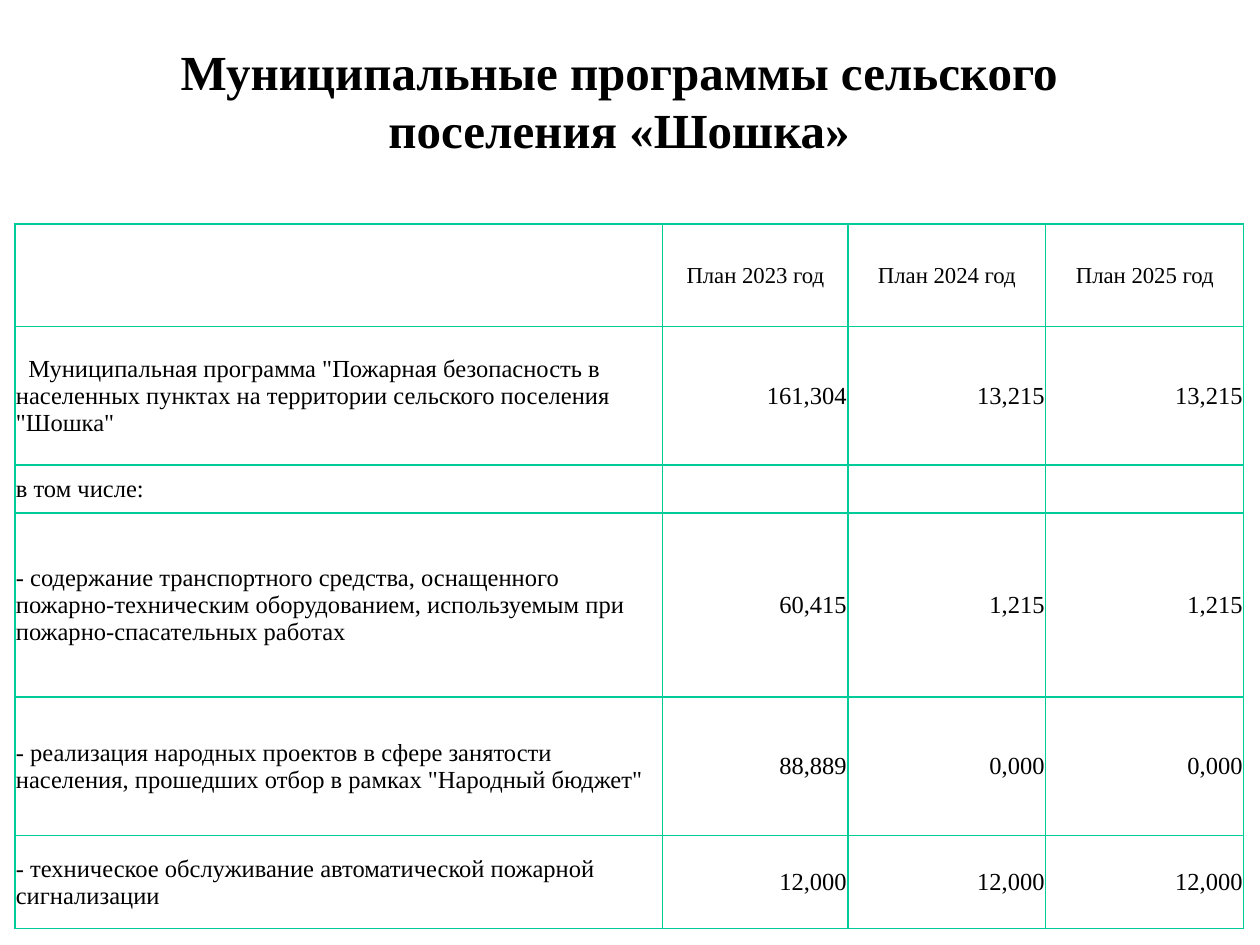
"""Build the slide listing the municipal programmes of a rural settlement."""
from dataclasses import dataclass

from lxml import etree
from pptx import Presentation
from pptx.dml.color import RGBColor
from pptx.enum.text import MSO_ANCHOR, MSO_AUTO_SIZE, PP_ALIGN
from pptx.oxml.ns import qn
from pptx.util import Cm, Pt

LEFT, CENTER, RIGHT = PP_ALIGN.LEFT, PP_ALIGN.CENTER, PP_ALIGN.RIGHT
MIDDLE = MSO_ANCHOR.MIDDLE
NO_AUTOFIT = MSO_AUTO_SIZE.NONE
TITLE_ONLY = 5


@dataclass(frozen=True)
class Theme:
    font: str = "Times New Roman"
    text: str = "000000"
    border: str = "00CC99"
    border_width: int = Pt(1)
    title_size: int = Pt(28)
    header_size: int = Pt(13)
    body_size: int = Pt(14)


THEME = Theme()
TITLE = "Муниципальные программы сельского поселения «Шошка»"
COLUMN_WIDTHS = (13.06, 3.73, 3.99, 3.99)
ROW_HEIGHTS = (2.06, 2.79, 0.97, 3.71, 2.79, 1.88)
PROGRAMME_ROW = 1
ROWS = (
    ("", "План 2023 год", "План 2024 год", "План 2025 год"),
    ('Муниципальная программа "Пожарная безопасность в населенных пунктах '
     'на территории сельского поселения "Шошка"', "161,304", "13,215", "13,215"),
    ("в том числе:", "", "", ""),
    ("- содержание транспортного средства, оснащенного пожарно-техническим "
     "оборудованием, используемым при пожарно-спасательных работах",
     "60,415", "1,215", "1,215"),
    ("- реализация народных проектов в сфере занятости населения, прошедших "
     'отбор в рамках "Народный бюджет"', "88,889", "0,000", "0,000"),
    ("- техническое обслуживание автоматической пожарной сигнализации",
     "12,000", "12,000", "12,000"),
)


def style_paragraph(paragraph, size, alignment, bold=False):
    """Apply the theme font and the given alignment to a paragraph."""
    paragraph.alignment = alignment
    font = paragraph.font
    font.name = THEME.font
    font.size = size
    font.bold = bold
    font.color.rgb = RGBColor.from_string(THEME.text)


def add_title(slide):
    """Fill and place the title placeholder."""
    title = slide.shapes.title
    title.left, title.top = Cm(2.26), Cm(0.91)
    title.width, title.height = Cm(19.94), Cm(2.21)
    frame = title.text_frame
    frame.text = TITLE
    frame.word_wrap = True
    frame.auto_size = NO_AUTOFIT
    frame.vertical_anchor = MIDDLE
    paragraph = frame.paragraphs[0]
    properties = paragraph._p.get_or_add_pPr()
    properties.set("marL", str(Cm(0.5)))
    properties.set("indent", "0")
    style_paragraph(paragraph, THEME.title_size, CENTER, bold=True)


def add_borders(cell):
    """Draw the theme border on all four sides of a cell."""
    properties = cell._tc.get_or_add_tcPr()
    for side in ("lnL", "lnR", "lnT", "lnB"):
        line = etree.SubElement(properties, qn(f"a:{side}"), w=str(THEME.border_width))
        fill = etree.SubElement(line, qn("a:solidFill"))
        etree.SubElement(fill, qn("a:srgbClr"), val=THEME.border)


def fill_cell(cell, text, size, alignment):
    """Write and format one table cell."""
    cell.text = text
    cell.vertical_anchor = MIDDLE
    cell.margin_left = cell.margin_right = cell.margin_top = Cm(0.02)
    cell.margin_bottom = 0
    add_borders(cell)
    cell.fill.background()
    style_paragraph(cell.text_frame.paragraphs[0], size, alignment)


def add_programme_table(slide):
    """Add the table of programmes and planned amounts."""
    frame = slide.shapes.add_table(
        len(ROWS), len(COLUMN_WIDTHS), Cm(0.3), Cm(4.52),
        Cm(sum(COLUMN_WIDTHS)), Cm(sum(ROW_HEIGHTS)))
    table = frame.table
    table.first_row = table.horz_banding = False
    for column, width in zip(table.columns, COLUMN_WIDTHS):
        column.width = Cm(width)
    for row, height in zip(table.rows, ROW_HEIGHTS):
        row.height = Cm(height)
    for row_index, values in enumerate(ROWS):
        is_header = row_index == 0
        size = THEME.header_size if is_header else THEME.body_size
        for column_index, text in enumerate(values):
            value_alignment = CENTER if is_header else RIGHT
            alignment = value_alignment if column_index else LEFT
            fill_cell(table.cell(row_index, column_index), text, size, alignment)
    programme = table.cell(PROGRAMME_ROW, 0).text_frame.paragraphs[0]
    programme._p.get_or_add_pPr().set("indent", str(Cm(0.25)))


def main():
    """Create the presentation and save it."""
    presentation = Presentation()
    presentation.slide_width, presentation.slide_height = Cm(25.4), Cm(19.05)
    slide = presentation.slides.add_slide(presentation.slide_layouts[TITLE_ONLY])
    add_title(slide)
    add_programme_table(slide)
    presentation.save("out.pptx")


if __name__ == "__main__":
    main()
